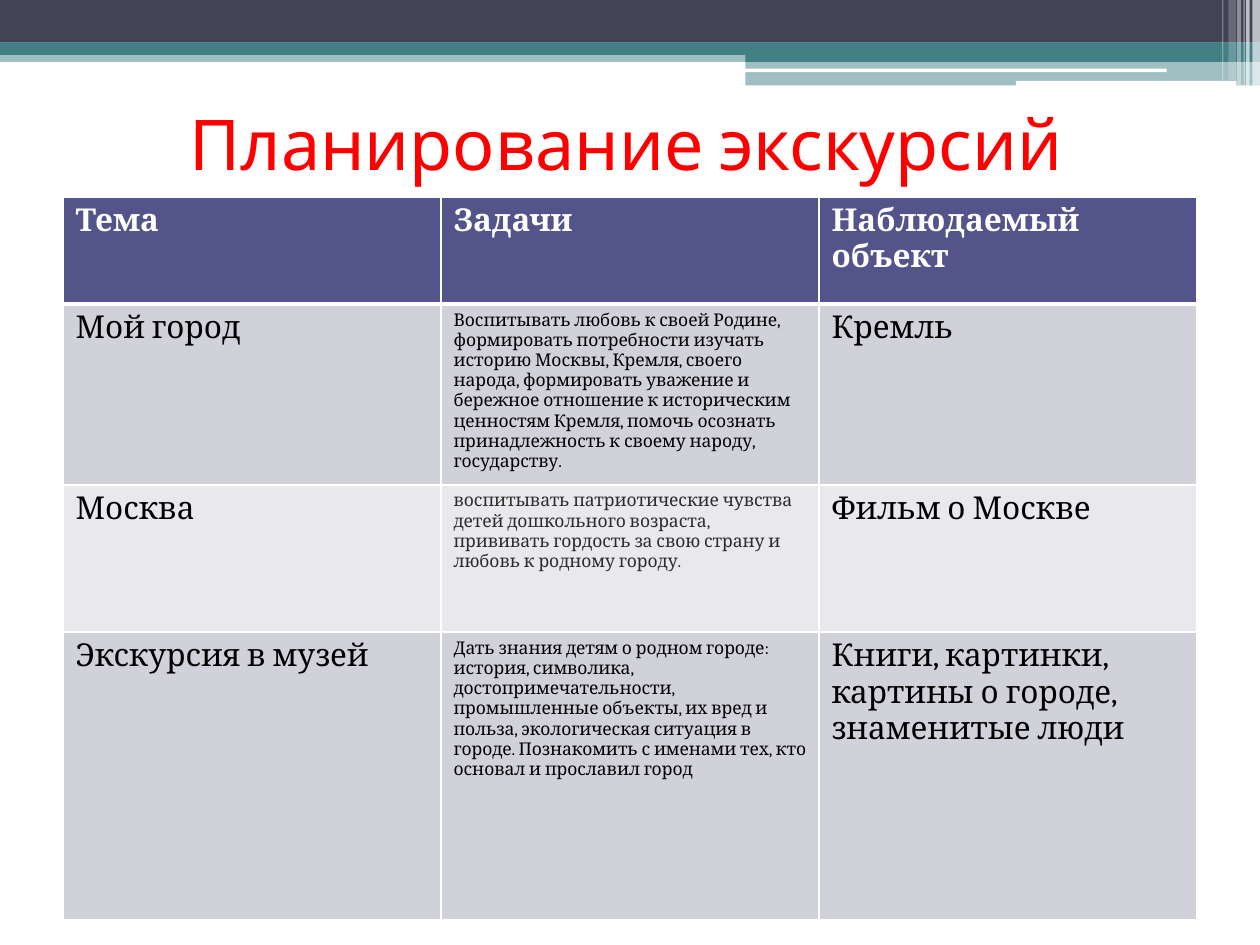
"""Build the excursion planning slide with its header bands and table."""
from dataclasses import dataclass

from lxml import etree
from pptx import Presentation
from pptx import util as u
from pptx.dml.color import RGBColor
from pptx.enum import shapes, text
from pptx.oxml import ns

WHITE, BLACK, RED = "FFFFFF", "000000", "FF0000"
SLATE, TEAL, VIOLET = "424456", "438086", "53548A"
ROW_FILLS = ("D1D1DA", "E9E9ED")
COLUMN_WIDTH = 216
ROW_HEIGHTS = (61.2, 98.5, 84.2, 164.2)


@dataclass(frozen=True)
class Band:
    left: float
    top: float
    width: float
    height: float
    color: str
    opacity: int = 100
    rounded: bool = False


@dataclass(frozen=True)
class Excursion:
    topic: str
    goals: str
    sight: str
    goals_color: str = BLACK


BANDS = (
    Band(0, 28.8, 720, 6.6, TEAL, 50),
    Band(0, 0, 720, 24.4, SLATE),
    Band(0, 24.2, 720, 7.2, TEAL),
    Band(426, 28.2, 294, 7.2, TEAL),
    Band(426, 34.6, 294, 14.2, TEAL, 50),
    Band(425.5, 39.2, 241.2, 2, WHITE, rounded=True),
    Band(580.5, 46.2, 126, 2.8, WHITE, rounded=True),
    Band(715.7, 0, 4.3, 49, WHITE, 65),
    Band(712.1, 0, 2.1, 49, WHITE, 65),
    Band(710.6, 0, 0.7, 49, WHITE, 60),
    Band(707, 0, 2.1, 49, WHITE, 40),
    Band(702, 0, 4.3, 46, WHITE, 20),
    Band(698.4, 0, 0.7, 46, WHITE, 30),
)

HEADINGS = ("Тема", "Задачи", "Наблюдаемый объект")
EXCURSIONS = (
    Excursion(
        "Мой город",
        "Воспитывать любовь к своей Родине, формировать потребности изучать "
        "историю Москвы, Кремля, своего народа, формировать уважение и бережное "
        "отношение к историческим ценностям Кремля, помочь осознать "
        "принадлежность к своему народу, государству.",
        "Кремль",
    ),
    Excursion(
        "Москва",
        "воспитывать патриотические чувства детей дошкольного возраста, "
        "прививать гордость за свою страну и любовь к родному городу.",
        "Фильм о Москве",
        "2D2A2A",
    ),
    Excursion(
        "Экскурсия в музей",
        "Дать знания детям о родном городе: история, символика, "
        "достопримечательности, промышленные объекты, их вред и польза, "
        "экологическая ситуация в городе. Познакомить с именами тех, кто "
        "основал и прославил город",
        "Книги, картинки, картины о городе, знаменитые люди",
    ),
)


def paint(fill, color: str, opacity: int = 100) -> None:
    fill.solid()
    fill.fore_color.rgb = RGBColor.from_string(color)
    if opacity < 100:
        tint = fill._xPr.find(".//" + ns.qn("a:srgbClr"))
        etree.SubElement(tint, ns.qn("a:alpha"), val=str(opacity * 1000))


def write(frame, content: str, *, size: float = 18, font: str = "Cambria",
          color: str = BLACK, bold: bool = False,
          align=text.PP_ALIGN.LEFT) -> None:
    para = frame.paragraphs[0]
    para.alignment = align
    span = para.add_run()
    span.text = content
    span.font.size = u.Pt(size)
    span.font.name = font
    span.font.bold = bold
    span.font.color.rgb = RGBColor.from_string(color)


def draw_band(page, band: Band) -> None:
    kinds = shapes.MSO_SHAPE
    kind = kinds.ROUNDED_RECTANGLE if band.rounded else kinds.RECTANGLE
    box = page.shapes.add_shape(kind, u.Pt(band.left), u.Pt(band.top),
                                u.Pt(band.width), u.Pt(band.height))
    box.shadow.inherit = False
    box.line.fill.background()
    paint(box.fill, band.color, band.opacity)


def draw_title(page) -> None:
    box = page.shapes.add_textbox(u.Pt(33.8), u.Pt(39.6), u.Pt(648), u.Pt(84.2))
    frame = box.text_frame
    frame.word_wrap = True
    frame.vertical_anchor = text.MSO_ANCHOR.MIDDLE
    write(frame, "Планирование экскурсий", size=40, font="Cabin", color=RED,
          align=text.PP_ALIGN.CENTER)


def set_borders(cell, top: float = 1, bottom: float = 1) -> None:
    properties = cell._tc.get_or_add_tcPr()
    widths = {"lnL": 1, "lnR": 1, "lnT": top, "lnB": bottom}
    for index, (side, width) in enumerate(widths.items()):
        line = etree.Element(ns.qn("a:" + side), w=str(u.Pt(width)))
        fill = etree.SubElement(line, ns.qn("a:solidFill"))
        etree.SubElement(fill, ns.qn("a:srgbClr"), val=WHITE)
        properties.insert(index, line)


def draw_table(page) -> None:
    table = page.shapes.add_table(
        len(ROW_HEIGHTS), len(HEADINGS), u.Pt(36), u.Pt(112.5),
        u.Pt(COLUMN_WIDTH * len(HEADINGS)), u.Pt(sum(ROW_HEIGHTS))).table
    for column in table.columns:
        column.width = u.Pt(COLUMN_WIDTH)
    for row, height in zip(table.rows, ROW_HEIGHTS):
        row.height = u.Pt(height)

    for cell, heading in zip(table.rows[0].cells, HEADINGS):
        write(cell.text_frame, heading, color=WHITE, bold=True)
        paint(cell.fill, VIOLET)
        set_borders(cell, bottom=3)

    for number, excursion in enumerate(EXCURSIONS):
        cells = table.rows[number + 1].cells
        topic, goals, sight = cells
        write(topic.text_frame, excursion.topic)
        write(goals.text_frame, excursion.goals, size=10,
              color=excursion.goals_color)
        write(sight.text_frame, excursion.sight)
        for cell in cells:
            paint(cell.fill, ROW_FILLS[number % 2])
            set_borders(cell, top=1 if number else 3)


def main() -> None:
    deck = Presentation()
    deck.slide_width, deck.slide_height = u.Pt(720), u.Pt(540)
    page = deck.slides.add_slide(deck.slide_layouts[6])
    for band in BANDS:
        draw_band(page, band)
    draw_title(page)
    draw_table(page)
    deck.save("out.pptx")


if __name__ == "__main__":
    main()
